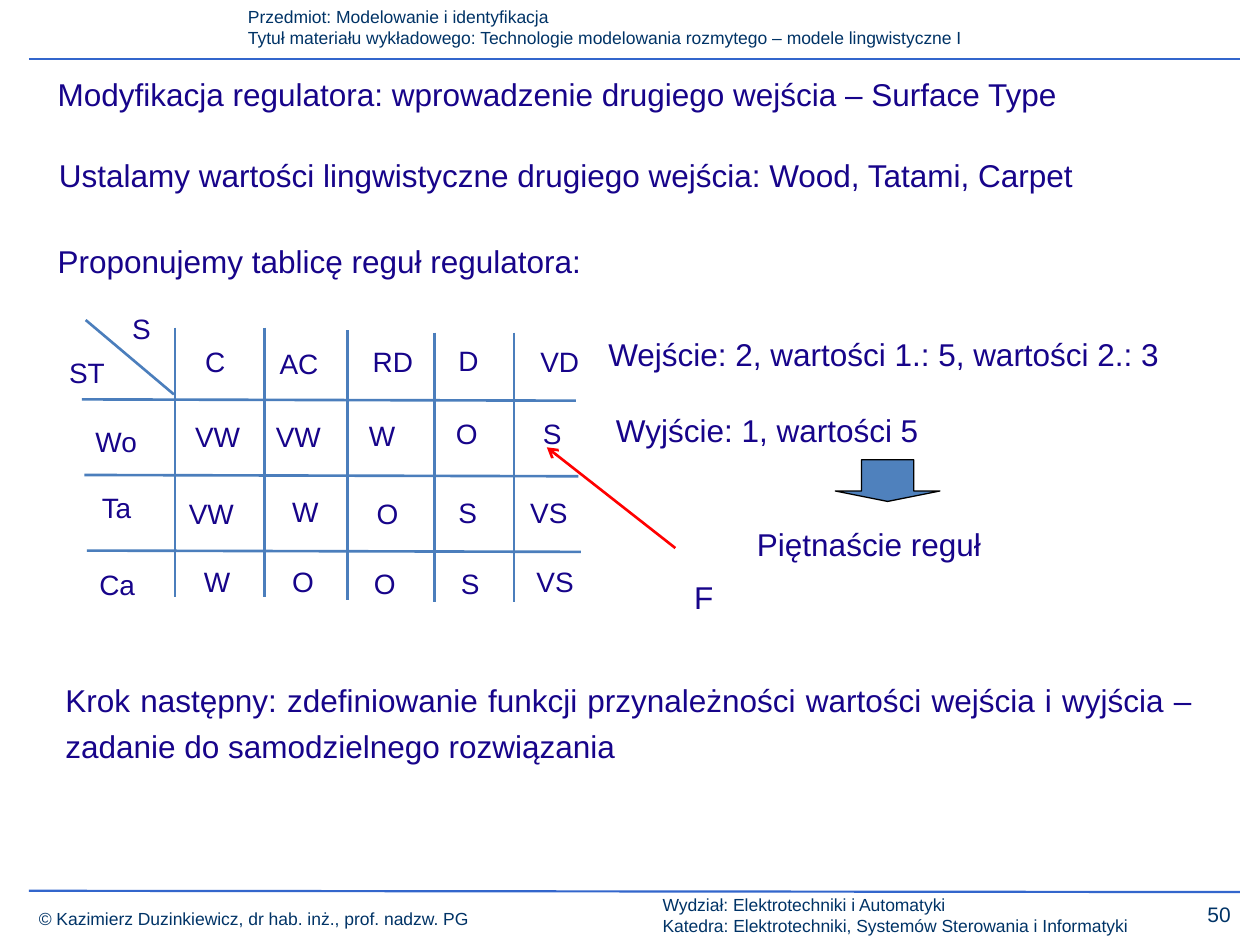
from dataclasses import dataclass

from lxml import etree
from pptx import Presentation
from pptx.dml.color import RGBColor
from pptx.enum.shapes import MSO_CONNECTOR, MSO_SHAPE
from pptx.enum.text import MSO_AUTO_SIZE, PP_ALIGN
from pptx.oxml.ns import qn
from pptx.slide import Slide
from pptx.util import Inches, Pt

STRAIGHT = MSO_CONNECTOR.STRAIGHT
DOWN_ARROW = MSO_SHAPE.DOWN_ARROW
GROW = MSO_AUTO_SIZE.SHAPE_TO_FIT_TEXT
LEFT, CENTER, JUSTIFY = PP_ALIGN.LEFT, PP_ALIGN.CENTER, PP_ALIGN.JUSTIFY

COLORS = {
    "frame_text": "003366",
    "frame_line": "3366CC",
    "body": "17048A",
    "grid": "4B7EBC",
    "arrow_fill": "4F81BD",
    "outline": "000000",
    "pointer": "FF0000",
}

FRAME_TEXTS = [
    (1.87, 0, 8.13, 0.44, 10, LEFT, [
        "Przedmiot: Modelowanie i identyfikacja",
        "Tytuł materiału wykładowego: Technologie modelowania rozmytego – modele lingwistyczne I",
    ]),
    (0.21, 7.16, 4.02, 0.27, 10, LEFT, ["© Kazimierz Duzinkiewicz, dr hab. inż., prof. nadzw. PG"]),
    (5.16, 7.05, 4.45, 0.44, 10, LEFT, [
        "Wydział: Elektrotechniki i Automatyki",
        "Katedra: Elektrotechniki, Systemów Sterowania i Informatyki",
    ]),
    (9.35, 7.11, 0.65, 0.3, 12, CENTER, ["50"]),
]

STATEMENTS = [
    (0.36, 0.49, 9.14, 0.46, "Modyfikacja regulatora: wprowadzenie drugiego wejścia – Surface Type"),
    (0.37, 1.13, 9.14, 0.46, "Ustalamy wartości lingwistyczne drugiego wejścia: Wood, Tatami, Carpet"),
    (0.36, 1.81, 9.14, 0.46, "Proponujemy tablicę reguł regulatora:"),
    (0.42, 5.3, 9.14, 0.83, "Krok następny: zdefiniowanie funkcji przynależności wartości "
                            "wejścia i wyjścia – zadanie do samodzielnego rozwiązania"),
    (5.91, 4.06, 2.4, 0.46, "Piętnaście reguł"),
    (4.73, 2.55, 5.03, 0.46, "Wejście: 2, wartości 1.: 5, wartości 2.: 3"),
    (4.79, 3.15, 4.08, 0.46, "Wyjście: 1, wartości 5"),
    (5.41, 4.48, 0.42, 0.46, "F"),
]

RULE_LABELS = [
    ("S", 0.95, 2.37), ("ST", 0.45, 2.72),
    ("C", 1.53, 2.63), ("AC", 2.12, 2.65), ("RD", 2.86, 2.63), ("D", 3.54, 2.62), ("VD", 4.19, 2.63),
    ("Wo", 0.66, 3.27), ("Ta", 0.71, 3.79), ("Ca", 0.69, 4.4),
    ("VW", 1.45, 3.23), ("VW", 2.09, 3.23), ("W", 2.83, 3.22), ("O", 3.52, 3.2), ("S", 4.21, 3.2),
    ("VW", 1.4, 3.84), ("W", 2.22, 3.82), ("O", 2.89, 3.84), ("S", 3.54, 3.83), ("VS", 4.11, 3.83),
    ("W", 1.52, 4.38), ("O", 2.22, 4.38), ("O", 2.87, 4.39), ("S", 3.56, 4.39), ("VS", 4.16, 4.38),
]
LABEL_WIDTHS = {
    "ST": 0.61, "AC": 0.61, "RD": 0.56, "VD": 0.58, "VS": 0.56,
    "Wo": 0.63, "Ta": 0.63, "Ca": 0.63, "VW": 0.68,
}
SINGLE_LETTER_WIDTH = 0.44
COLUMN_LINES = [(1.39, 2.6), (2.1, 2.6), (2.76, 2.62), (3.45, 2.64), (4.08, 2.64)]
COLUMN_LINE_HEIGHT = 2.14


@dataclass
class SlideBuilder:
    """Draws text, lines and shapes on a slide in one style."""

    slide: Slide
    font: str = "Arial"

    def text(self, left, top, width, height, lines, size, color, align=JUSTIFY, spacing=None):
        shape = self.slide.shapes.add_textbox(Inches(left), Inches(top), Inches(width), Inches(height))
        frame = shape.text_frame
        frame.word_wrap = True
        frame.auto_size = GROW
        frame.text = "\n".join(lines)
        for paragraph in frame.paragraphs:
            paragraph.alignment = align
            paragraph.line_spacing = spacing
            paragraph.font.name = self.font
            paragraph.font.size = Pt(size)
            paragraph.font.color.rgb = RGBColor.from_string(COLORS[color])

    def body(self, left, top, width, height, content, size=18):
        self.text(left, top, width, height, [content], size, "body", spacing=1.2)

    def line(self, start, end, color, weight=1.5, arrow=False):
        points = [Inches(value) for value in (*start, *end)]
        connector = self.slide.shapes.add_connector(STRAIGHT, *points)
        connector.line.color.rgb = RGBColor.from_string(COLORS[color])
        connector.line.width = Pt(weight)
        if arrow:
            etree.SubElement(connector.line._get_or_add_ln(), qn("a:tailEnd"), type="arrow")
        etree.SubElement(connector._element.spPr, qn("a:effectLst"))

    def down_arrow(self, left, top, width, height):
        shape = self.slide.shapes.add_shape(
            DOWN_ARROW, Inches(left), Inches(top), Inches(width), Inches(height))
        shape.shadow.inherit = False
        shape.adjustments[0] = 0.5
        shape.adjustments[1] = 0.25
        shape.fill.solid()
        shape.fill.fore_color.rgb = RGBColor.from_string(COLORS["arrow_fill"])
        shape.line.color.rgb = RGBColor.from_string(COLORS["outline"])
        shape.line.width = Pt(0.75)


def main():
    presentation = Presentation()
    presentation.slide_width = Inches(10)
    presentation.slide_height = Inches(7.5)
    builder = SlideBuilder(presentation.slides.add_slide(presentation.slide_layouts[6]))

    for left, top, width, height, size, align, lines in FRAME_TEXTS:
        builder.text(left, top, width, height, lines, size, "frame_text", align)
    for start_y, end_y in ((0.47, 0.47), (7.07, 7.08)):
        builder.line((0.23, start_y), (9.84, end_y), "frame_line", 1.25)

    for statement in STATEMENTS:
        builder.body(*statement)

    for label, left, top in RULE_LABELS:
        builder.body(left, top, LABEL_WIDTHS.get(label, SINGLE_LETTER_WIDTH), 0.42, label, 16)
    for row in range(3):
        left, top = 0.65 + 0.02 * row, 3.17 + 0.6 * row
        builder.line((left, top), (left + 3.92, top + 0.01), "grid")
    for left, top in COLUMN_LINES:
        builder.line((left, top), (left, top + COLUMN_LINE_HEIGHT), "grid")
    builder.line((0.68, 2.54), (1.38, 3.13), "grid")

    builder.down_arrow(6.63, 3.65, 0.83, 0.33)
    builder.line((5.36, 4.35), (4.34, 3.55), "pointer", arrow=True)
    presentation.save("out.pptx")


if __name__ == "__main__":
    main()
